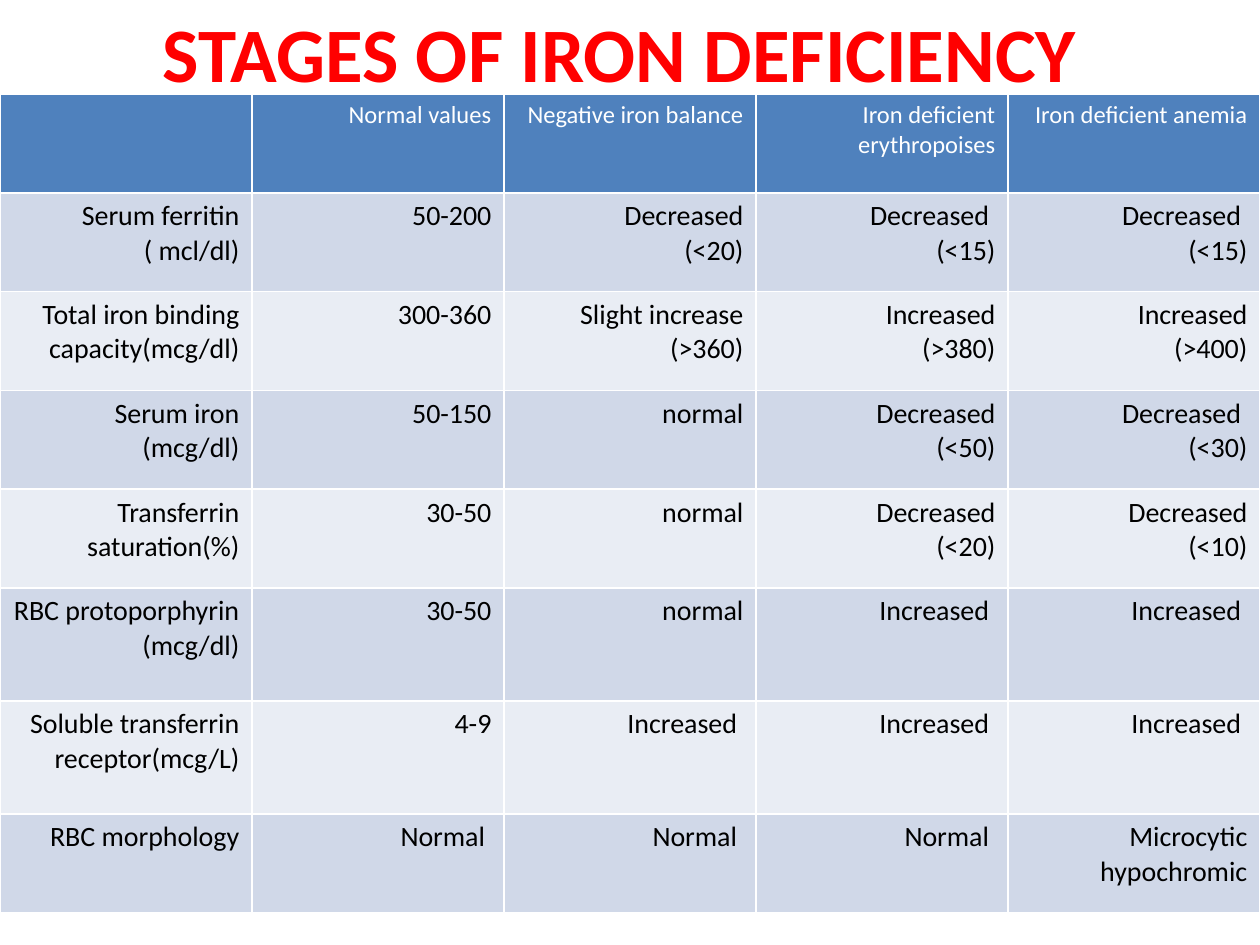
from pptx import Presentation
from pptx.dml.color import RGBColor
from pptx.enum import text
from pptx.util import Cm, Pt

RED = RGBColor(0xFF, 0x00, 0x00)
WHITE = RGBColor(0xFF, 0xFF, 0xFF)
BLACK = RGBColor(0x00, 0x00, 0x00)
HEADER_BLUE = RGBColor(0x4F, 0x81, 0xBD)
BANDS = [RGBColor(0xE9, 0xED, 0xF4), RGBColor(0xD0, 0xD8, 0xE8)]

ROWS = [
    ["", "Normal values", "Negative iron balance", "Iron deficient erythropoises", "Iron deficient anemia"],
    ["Serum ferritin ( mcl/dl)", "50-200", "Decreased\n(<20)", "Decreased \n(<15)", "Decreased \n(<15)"],
    ["Total iron binding capacity(mcg/dl)", "300-360", "Slight increase\n(>360)", "Increased\n(>380)", "Increased\n(>400)"],
    ["Serum iron (mcg/dl)", "50-150", "normal", "Decreased\n(<50)", "Decreased \n(<30)"],
    ["Transferrin saturation(%)", "30-50", "normal", "Decreased\n(<20)", "Decreased\n(<10)"],
    ["RBC protoporphyrin\n(mcg/dl)", "30-50", "normal", "Increased ", "Increased "],
    ["Soluble transferrin receptor(mcg/L)", "4-9", "Increased ", "Increased ", "Increased "],
    ["RBC morphology", "Normal ", "Normal ", "Normal ", "Microcytic hypochromic"],
]
ROW_HEIGHTS = [1.99] * 5 + [2.28] * 2 + [1.99]


def style_paragraph(paragraph, size, color, bold, alignment):
    paragraph.alignment = alignment
    paragraph.font.name = "Calibri"
    paragraph.font.size = Pt(size)
    paragraph.font.bold = bold
    paragraph.font.color.rgb = color


presentation = Presentation()
presentation.slide_width = Cm(25.4)
presentation.slide_height = Cm(19.05)
slide = presentation.slides.add_slide(presentation.slide_layouts[6])

title = slide.shapes.add_textbox(Cm(1.3), Cm(0), Cm(22.4), Cm(2.1))
frame = title.text_frame
frame.word_wrap = True
frame.vertical_anchor = text.MSO_ANCHOR.MIDDLE
frame.margin_left = frame.margin_right = Cm(0.13)
frame.margin_top = frame.margin_bottom = Cm(0.13)
frame.text = "STAGES OF IRON DEFICIENCY"
style_paragraph(frame.paragraphs[0], 44, RED, True, text.PP_ALIGN.CENTER)

table = slide.shapes.add_table(
    len(ROWS), len(ROWS[0]), Cm(0), Cm(1.9), Cm(25.4), Cm(sum(ROW_HEIGHTS))
).table
for column in table.columns:
    column.width = Cm(5.08)

for row_index, (labels, height) in enumerate(zip(ROWS, ROW_HEIGHTS)):
    table.rows[row_index].height = Cm(height)
    is_header = row_index == 0
    size, color = (14, WHITE) if is_header else (16, BLACK)
    for column_index, label in enumerate(labels):
        cell = table.cell(row_index, column_index)
        cell.fill.solid()
        cell.fill.fore_color.rgb = HEADER_BLUE if is_header else BANDS[row_index % 2]
        cell.text = label
        for paragraph in cell.text_frame.paragraphs:
            style_paragraph(paragraph, size, color, False, text.PP_ALIGN.RIGHT)

presentation.save("out.pptx")
